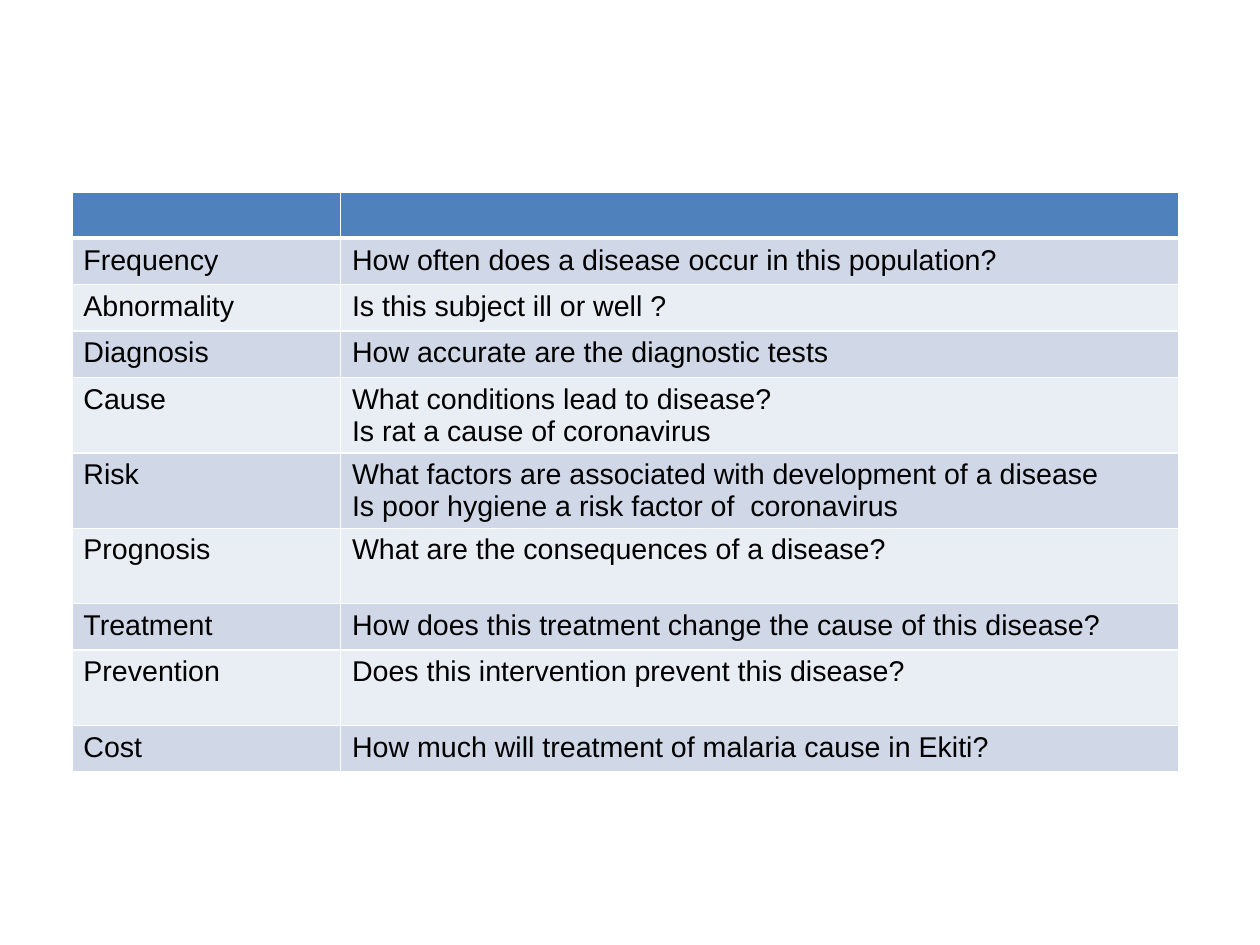
from lxml.etree import SubElement
from pptx import Presentation
from pptx.dml.color import RGBColor
from pptx.oxml.ns import qn
from pptx.util import Inches, Pt

CM_PER_INCH = 2.54
POINTS_PER_INCH = 72
SLIDE_WIDTH, SLIDE_HEIGHT = 28 / CM_PER_INCH, 21 / CM_PER_INCH
HEADER_FILL = "4F81BD"
BAND_FILLS = ("D0D8E8", "E9EDF4")
SINGLE_HEIGHT, DOUBLE_HEIGHT = 29.2 / POINTS_PER_INCH, 0.66
COLUMN_WIDTHS = (2.35, 7.33)
QUESTIONS = [
    ("Frequency", ["How often does a disease occur in this population?"]),
    ("Abnormality", ["Is this subject ill or well ?"]),
    ("Diagnosis", ["How accurate are the diagnostic tests"]),
    ("Cause", ["What conditions lead to disease?",
               "Is rat a cause of coronavirus"]),
    ("Risk", ["What factors are associated with development of a disease",
              "Is poor hygiene a risk factor of  coronavirus"]),
    ("Prognosis", ["What are the consequences of a disease?"]),
    ("Treatment", ["How does this treatment change the cause of this disease?"]),
    ("Prevention", ["Does this intervention prevent this disease?"]),
    ("Cost", ["How much will treatment of malaria cause in Ekiti?"]),
]
TALL_TOPICS = ("Cause", "Risk", "Prognosis", "Prevention")


def color(hex_value):
    return RGBColor.from_string(hex_value)


def set_slide_size(presentation):
    """Set a custom size and drop the template's 4:3 screen type."""
    presentation.slide_width = Inches(SLIDE_WIDTH)
    presentation.slide_height = Inches(SLIDE_HEIGHT)
    size = presentation.element.find(qn("p:sldSz"))
    size.attrib.pop("type", None)


def set_borders(cell, top=1, bottom=1):
    properties = cell._tc.get_or_add_tcPr()
    for side, width in (("L", 1), ("R", 1), ("T", top), ("B", bottom)):
        line = SubElement(properties, qn(f"a:ln{side}"), w=str(Pt(width)))
        fill = SubElement(line, qn("a:solidFill"))
        SubElement(fill, qn("a:srgbClr"), val="FFFFFF")


def fill_cell(cell, hex_value):
    cell.fill.solid()
    cell.fill.fore_color.rgb = color(hex_value)


def write_cell(cell, lines):
    frame = cell.text_frame
    for index, line in enumerate(lines):
        paragraph = frame.add_paragraph() if index else frame.paragraphs[0]
        run = paragraph.add_run()
        run.text = line
        run.font.name = "Arial"
        run.font.size = Pt(18)
        run.font.color.rgb = color("000000")


def add_question_table(slide):
    heights = [SINGLE_HEIGHT] + [
        DOUBLE_HEIGHT if topic in TALL_TOPICS else SINGLE_HEIGHT
        for topic, _ in QUESTIONS]
    table = slide.shapes.add_table(
        len(heights), len(COLUMN_WIDTHS), Inches(0.63), Inches(1.68),
        Inches(sum(COLUMN_WIDTHS)), Inches(sum(heights))).table
    for column, width in zip(table.columns, COLUMN_WIDTHS):
        column.width = Inches(width)
    for row, height in zip(table.rows, heights):
        row.height = Inches(height)

    for cell in table.rows[0].cells:
        set_borders(cell, bottom=3)
        fill_cell(cell, HEADER_FILL)
    for index, (topic, questions) in enumerate(QUESTIONS):
        cells = table.rows[index + 1].cells
        for cell, lines in zip(cells, ([topic], questions)):
            set_borders(cell, top=1 if index else 3)
            fill_cell(cell, BAND_FILLS[index % 2])
            write_cell(cell, lines)


def main():
    presentation = Presentation()
    set_slide_size(presentation)
    slide = presentation.slides.add_slide(presentation.slide_layouts[6])
    add_question_table(slide)
    presentation.save("out.pptx")


if __name__ == "__main__":
    main()
